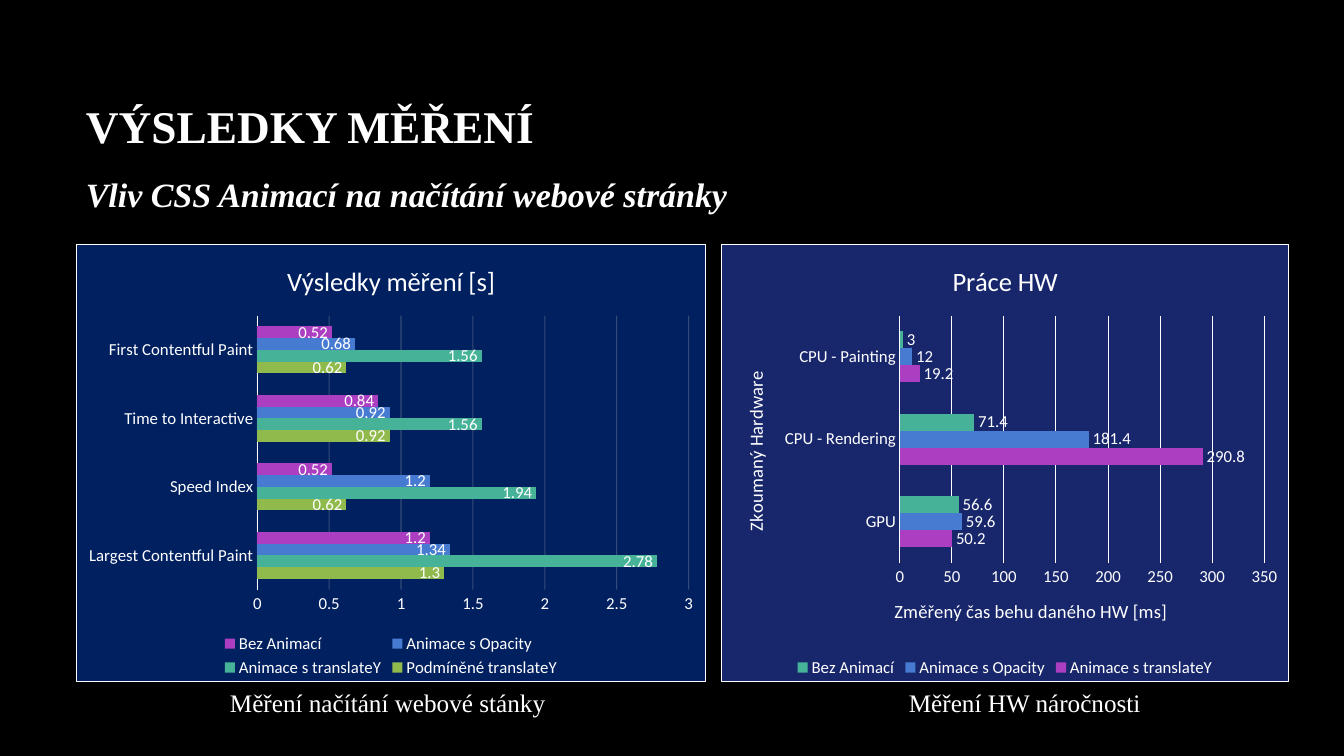
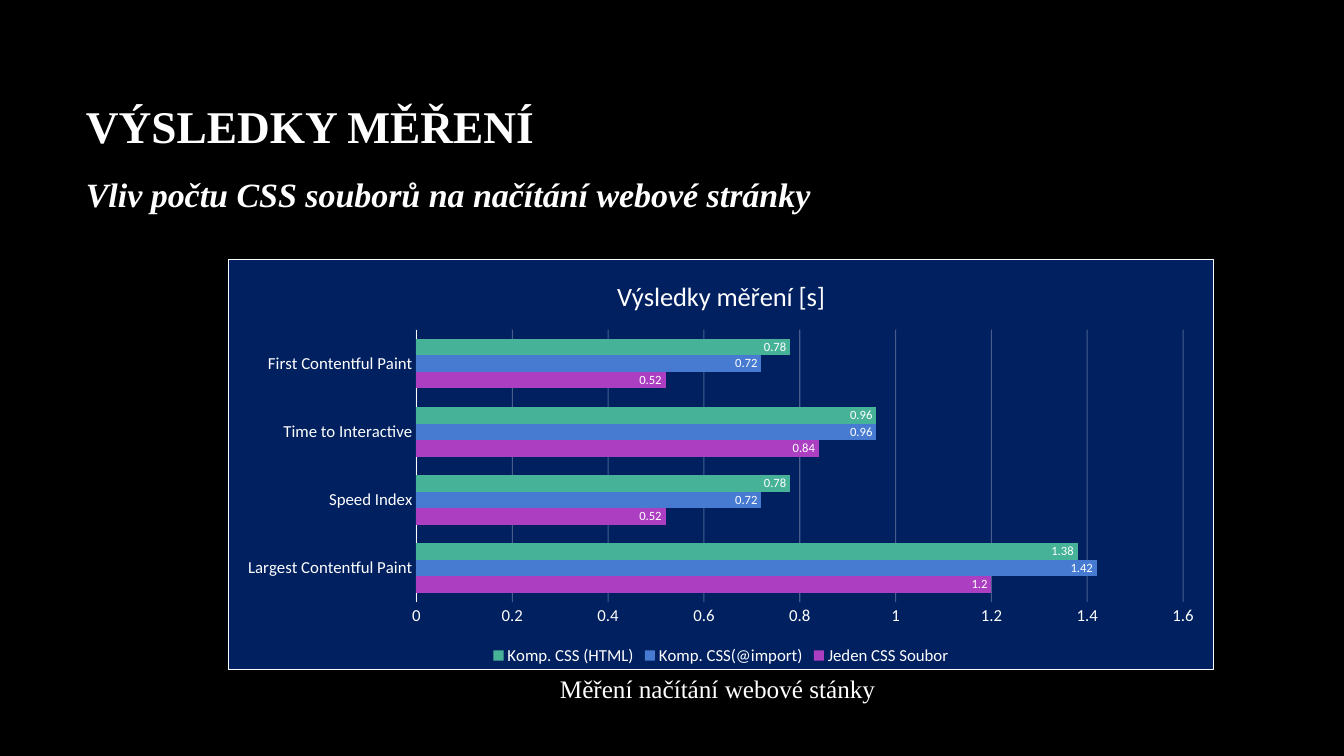
"""Builds two slides with measurement charts on web page loading."""
import pptx
import pptx.chart.data
import pptx.dml.color
import pptx.enum.chart
import pptx.enum.text
import pptx.oxml
import pptx.util

PX = 914400 / 100.8
WHITE, BLACK, NAVY, INDIGO, GRAY = "FFFFFF", "000000", "002060", "18276C", "BFBFBF"
PURPLE, BLUE, TEAL, GREEN = "AC3EC1", "477BD1", "46B298", "90BA4C"
SERIF, SANS = "Times New Roman", "Calibri"
NS = ('xmlns:a="http://schemas.openxmlformats.org/drawingml/2006/main" '
      'xmlns:c="http://schemas.openxmlformats.org/drawingml/2006/chart"')

HEADING = "VÝSLEDKY MĚŘENÍ"
HEADING_BOX = (76, 68, 1118, 149)
METRICS = ["Largest Contentful Paint", "Speed Index", "Time to Interactive", "First Contentful Paint"]
HARDWARE = ["GPU", "CPU - Rendering", "CPU - Painting"]

SLIDES = [
    {
        "subtitle": "Vliv CSS Animací na načítání webové stránky",
        "captions": [
            ("Měření načítání webové stánky", (220, 682, 343, 40)),
            ("Měření HW náročnosti", (899, 682, 255, 40)),
        ],
        "charts": [
            {
                "title": "Výsledky měření [s]", "box": (76, 244, 630, 438), "fill": NAVY,
                "categories": METRICS, "gap": 182, "scale": (3, 0.5), "grid": (GRAY, 27),
                "labels": ("INSIDE_END", 12), "axis_titles": None,
                "series": [
                    ("Podmíněné translateY", GREEN, (1.3, 0.62, 0.92, 0.62)),
                    ("Animace s translateY", TEAL, (2.78, 1.94, 1.56, 1.56)),
                    ("Animace s Opacity", BLUE, (1.34, 1.2, 0.92, 0.68)),
                    ("Bez Animací", PURPLE, (1.2, 0.52, 0.84, 0.52)),
                ],
            },
            {
                "title": "Práce HW", "box": (721, 244, 568, 438), "fill": INDIGO,
                "categories": HARDWARE, "gap": 182, "scale": (350, 50), "grid": (WHITE, 100),
                "labels": ("OUTSIDE_END", 12),
                "axis_titles": ("Zkoumaný Hardware", "Změřený čas behu daného HW [ms]"),
                "series": [
                    ("Animace s translateY", PURPLE, (50.2, 290.8, 19.2)),
                    ("Animace s Opacity", BLUE, (59.6, 181.4, 12)),
                    ("Bez Animací", TEAL, (56.6, 71.4, 3)),
                ],
            },
        ],
    },
    {
        "subtitle": "Vliv počtu CSS souborů na načítání webové stránky",
        "captions": [("Měření načítání webové stánky", (550, 668, 343, 40))],
        "charts": [
            {
                "title": "Výsledky měření [s]", "box": (228, 259, 986, 411), "fill": NAVY,
                "categories": METRICS, "gap": 113, "scale": (1.6, 0.2), "grid": (WHITE, 27),
                "labels": ("INSIDE_END", 9), "axis_titles": None,
                "series": [
                    ("Jeden CSS Soubor", PURPLE, (1.2, 0.52, 0.84, 0.52)),
                    ("Komp. CSS(@import)", BLUE, (1.42, 0.72, 0.96, 0.72)),
                    ("Komp. CSS (HTML)", TEAL, (1.38, 0.78, 0.96, 0.78)),
                ],
            },
        ],
    },
]


def emu(box):
    return [pptx.util.Emu(round(length * PX)) for length in box]


def paint(color_format, color):
    color_format.rgb = pptx.dml.color.RGBColor.from_string(color)


def fill_solid(fill, color):
    fill.solid()
    paint(fill.fore_color, color)


def style_font(font, size, name=SANS, bold=False, italic=False):
    font.size, font.name, font.bold, font.italic = pptx.util.Pt(size), name, bold, italic
    paint(font.color, WHITE)


def add_run(paragraph, text, size, name=SANS, bold=False, italic=False):
    run = paragraph.add_run()
    run.text = text
    style_font(run.font, size, name, bold, italic)


def add_heading(slide, subtitle):
    frame = slide.shapes.add_textbox(*emu(HEADING_BOX)).text_frame
    frame.word_wrap = True
    frame.vertical_anchor = pptx.enum.text.MSO_ANCHOR.MIDDLE
    paragraph = frame.paragraphs[0]
    paragraph.line_spacing = 1.5
    paragraph.space_after = pptx.util.Pt(6)
    add_run(paragraph, HEADING, 32.4, SERIF, bold=True)
    paragraph.add_line_break()
    add_run(paragraph, subtitle, 24.3, SERIF, bold=True, italic=True)


def add_caption(slide, text, box):
    frame = slide.shapes.add_textbox(*emu(box)).text_frame
    frame.word_wrap = False
    add_run(frame.paragraphs[0], text, 18, SERIF)


def frame_chart(chart, color):
    space = chart.element
    space.chart.addprevious(pptx.oxml.parse_xml(f'<c:roundedCorners {NS} val="0"/>'))
    space.chart.addnext(pptx.oxml.parse_xml(
        f'<c:spPr {NS}><a:solidFill><a:srgbClr val="{color}"/></a:solidFill>'
        f'<a:ln w="9525"><a:solidFill><a:srgbClr val="{WHITE}"/></a:solidFill></a:ln></c:spPr>'))


def style_axes(chart, content):
    category_axis, value_axis = chart.category_axis, chart.value_axis
    for axis in (category_axis, value_axis):
        axis.major_tick_mark = pptx.enum.chart.XL_TICK_MARK.NONE
        style_font(axis.tick_labels.font, 12)
    category_line = category_axis.format.line
    category_line.width = pptx.util.Pt(0.75)
    fill_solid(category_line.fill, WHITE)
    value_axis.format.line.fill.background()
    value_axis.minimum_scale = 0
    value_axis.maximum_scale, value_axis.major_unit = content["scale"]

    grid_color, opacity = content["grid"]
    grid = value_axis.major_gridlines.format.line
    grid.width = pptx.util.Pt(0.75)
    fill_solid(grid.fill, grid_color)
    if opacity < 100:
        for color in value_axis.major_gridlines._xAx.xpath("c:majorGridlines//a:srgbClr"):
            color.append(pptx.oxml.parse_xml(f'<a:alpha {NS} val="{opacity * 1000}"/>'))

    if content["axis_titles"]:
        for axis, title in zip((category_axis, value_axis), content["axis_titles"]):
            add_run(axis.axis_title.text_frame.paragraphs[0], title, 13.3)


def add_bar_chart(slide, content):
    data = pptx.chart.data.CategoryChartData()
    data.categories = content["categories"]
    for name, _, values in content["series"]:
        data.add_series(name, values)
    chart = slide.shapes.add_chart(
        pptx.enum.chart.XL_CHART_TYPE.BAR_CLUSTERED, *emu(content["box"]), data).chart
    style_font(chart.font, 10)
    frame_chart(chart, content["fill"])
    add_run(chart.chart_title.text_frame.paragraphs[0], content["title"], 19)
    chart.chart_title.include_in_layout = False
    chart.has_legend = True
    chart.legend.position = pptx.enum.chart.XL_LEGEND_POSITION.BOTTOM
    chart.legend.include_in_layout = False
    style_font(chart.legend.font, 12)
    style_axes(chart, content)

    plot = chart.plots[0]
    plot.gap_width = content["gap"]
    plot.vary_by_categories = False
    position, label_size = content["labels"]
    for series, (_, color, _) in zip(plot.series, content["series"]):
        fill_solid(series.format.fill, color)
        labels = series.data_labels
        labels.show_value = True
        labels.position = pptx.enum.chart.XL_LABEL_POSITION[position]
        style_font(labels.font, label_size)


def main():
    deck = pptx.Presentation()
    deck.slide_width, deck.slide_height = emu((1344, 756))
    for content in SLIDES:
        slide = deck.slides.add_slide(deck.slide_layouts[6])
        fill_solid(slide.background.fill, BLACK)
        add_heading(slide, content["subtitle"])
        for chart in content["charts"]:
            add_bar_chart(slide, chart)
        for text, box in content["captions"]:
            add_caption(slide, text, box)
    deck.save("out.pptx")


if __name__ == "__main__":
    main()
